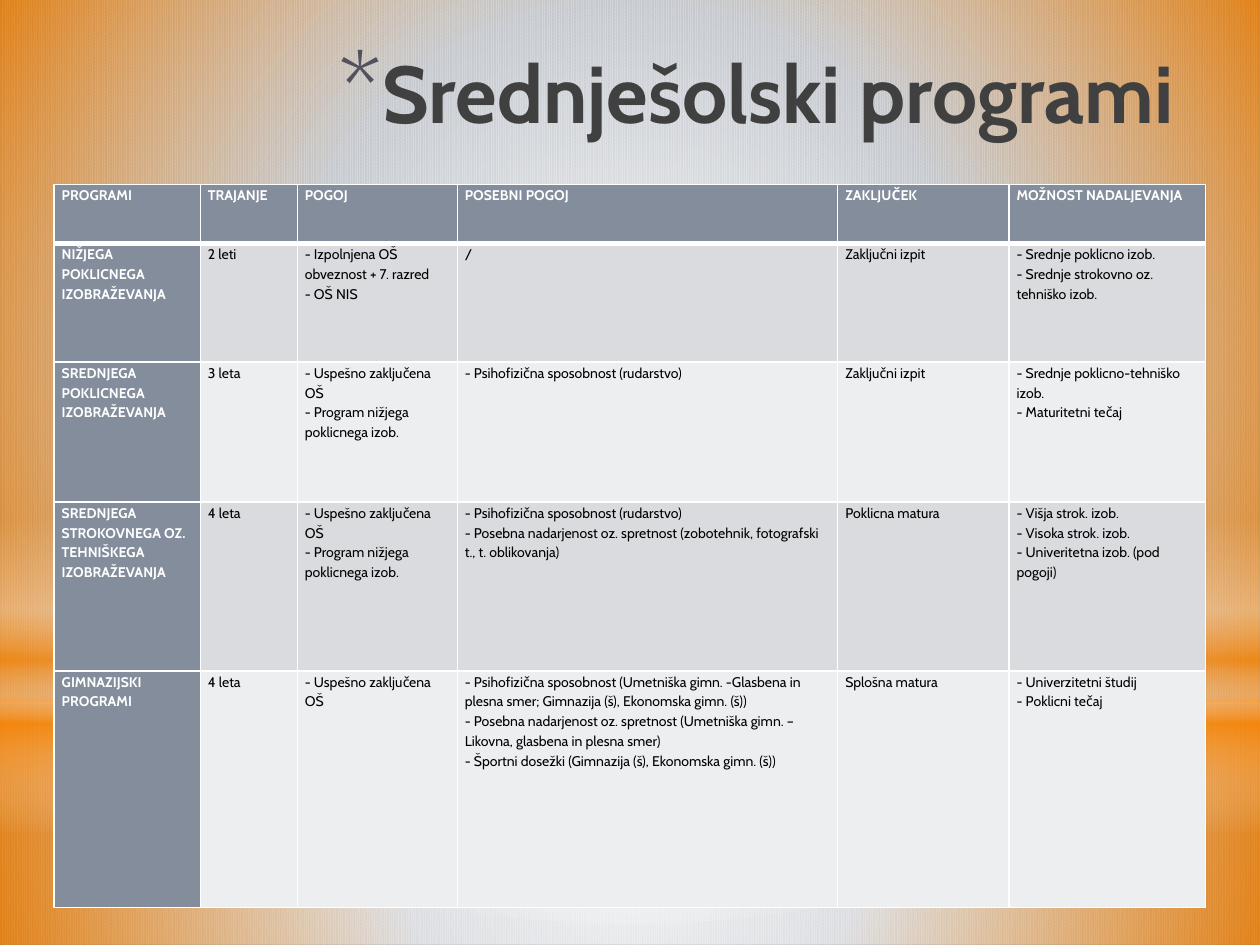
from lxml.etree import SubElement
from pptx import Presentation
from pptx.dml.color import RGBColor
from pptx.enum.dml import MSO_PATTERN_TYPE as Pattern
from pptx.enum.shapes import MSO_SHAPE as Shape
from pptx.enum.text import MSO_ANCHOR as Anchor, PP_ALIGN as Align
from pptx.oxml.ns import qn
from pptx.util import Inches, Pt


def color(value):
    return RGBColor.from_string(value)


def add_node(parent, tag, **attributes):
    return SubElement(parent, qn(f"a:{tag}"), {k: str(v) for k, v in attributes.items()})


class ProgramSlide:
    font = "Cabin"
    white, black, slate = "FFFFFF", "000000", "838D9B"
    bands = ("D9DBDE", "EDEEEF")
    unit = Inches(0.1)

    def __init__(self, presentation):
        presentation.slide_width = self.span(100)
        presentation.slide_height = self.span(75)
        self.slide = presentation.slides.add_slide(presentation.slide_layouts[6])

    def span(self, units):
        return round(units * self.unit)

    def box(self, *units):
        return [self.span(value) for value in units]

    def background(self, fore, back):
        fill = self.slide.background.fill
        fill.patterned()
        fill.pattern = Pattern.PERCENT_90
        fill.fore_color.rgb = color(fore)
        fill.back_color.rgb = color(back)

    def glow(self, kind, place, stops, angle=None):
        glow = self.slide.shapes.add_shape(kind, *self.box(*place))
        glow.shadow.inherit = False
        glow.line.fill.background()
        glow.fill.gradient()
        gradient = glow.element.spPr.find(qn("a:gradFill"))
        for child in list(gradient):
            gradient.remove(child)
        stop_list = add_node(gradient, "gsLst")
        for position, tint, opacity in stops:
            stop = add_node(stop_list, "gs", pos=position * 1000)
            add_node(add_node(stop, "srgbClr", val=tint), "alpha", val=opacity * 1000)
        if angle is None:
            center = add_node(gradient, "path", path="circle")
            add_node(center, "fillToRect", l=50000, t=50000, r=50000, b=50000)
        else:
            add_node(gradient, "lin", ang=angle * 60000, scaled=0)

    def add_words(self, paragraph, words, size, tint, bold):
        run = paragraph.add_run()
        run.text = words
        run.font.name = self.font
        run.font.size = Pt(size)
        run.font.bold = bold
        run.font.color.rgb = color(tint)

    def title(self, place, words):
        frame = self.slide.shapes.add_textbox(*self.box(*place)).text_frame
        frame.word_wrap = True
        frame.vertical_anchor = Anchor.TOP
        paragraph = frame.paragraphs[0]
        paragraph.alignment = Align.RIGHT
        properties = paragraph._p.get_or_add_pPr()
        properties.set("marL", str(self.span(3.5)))
        properties.set("indent", str(-self.span(3.5)))
        add_node(add_node(properties, "buClr"), "srgbClr", val="53515E")
        add_node(properties, "buSzPct", val=128000)
        add_node(properties, "buFont", typeface=self.font)
        add_node(properties, "buChar", char="*")
        self.add_words(paragraph, words, 46, "404040", True)

    def cell(self, cell, lines, fill, tint, bold, top, bottom):
        cell.margin_left = cell.margin_right = self.span(0.6)
        cell.margin_top = cell.margin_bottom = 0
        properties = cell._tc.get_or_add_tcPr()
        for side, width in (("lnL", 1), ("lnR", 1), ("lnT", top), ("lnB", bottom)):
            border = add_node(properties, side, w=Pt(width))
            add_node(add_node(border, "solidFill"), "srgbClr", val=self.white)
        cell.fill.solid()
        cell.fill.fore_color.rgb = color(fill)
        frame = cell.text_frame
        for index, words in enumerate(lines):
            paragraph = frame.add_paragraph() if index else frame.paragraphs[0]
            paragraph.line_spacing = 1.15
            self.add_words(paragraph, words, 8, tint, bold)

    def table(self, left, top, widths, heights, rows):
        place = self.box(left, top, sum(widths), sum(heights))
        table = self.slide.shapes.add_table(len(rows), len(widths), *place).table
        for column, width in zip(table.columns, widths):
            column.width = self.span(width)
        for row, height in zip(table.rows, heights):
            row.height = self.span(height)
        for r, row in enumerate(rows):
            for c, words in enumerate(row):
                heading = r == 0 or c == 0
                self.cell(
                    table.cell(r, c),
                    words.split("\n"),
                    self.slate if heading else self.bands[(r - 1) % 2],
                    self.white if heading else self.black,
                    heading,
                    3 if r == 1 else 1,
                    3 if r == 0 else 1,
                )


PROGRAMS = [
    ("PROGRAMI", "TRAJANJE", "POGOJ", "POSEBNI POGOJ", "ZAKLJUČEK", "MOŽNOST NADALJEVANJA"),
    ("NIŽJEGA POKLICNEGA IZOBRAŽEVANJA", "2 leti",
     "- Izpolnjena OŠ obveznost + 7. razred\n- OŠ NIS",
     "/", "Zaključni izpit",
     "- Srednje poklicno izob.\n- Srednje strokovno oz. tehniško izob."),
    ("SREDNJEGA POKLICNEGA IZOBRAŽEVANJA", "3 leta",
     "- Uspešno zaključena OŠ\n- Program nižjega poklicnega izob.",
     "- Psihofizična sposobnost (rudarstvo)", "Zaključni izpit",
     "- Srednje poklicno-tehniško izob.\n- Maturitetni tečaj"),
    ("SREDNJEGA STROKOVNEGA OZ. TEHNIŠKEGA IZOBRAŽEVANJA", "4 leta",
     "- Uspešno zaključena OŠ\n- Program nižjega poklicnega izob.",
     "- Psihofizična sposobnost (rudarstvo)\n"
     "- Posebna nadarjenost oz. spretnost (zobotehnik, fotografski t., t. oblikovanja)",
     "Poklicna matura",
     "- Višja strok. izob.\n- Visoka strok. izob.\n- Univeritetna izob. (pod pogoji)"),
    ("GIMNAZIJSKI PROGRAMI", "4 leta", "- Uspešno zaključena OŠ",
     "- Psihofizična sposobnost (Umetniška gimn. -Glasbena in plesna smer; "
     "Gimnazija (š), Ekonomska gimn. (š))\n"
     "- Posebna nadarjenost oz. spretnost (Umetniška gimn. – Likovna, glasbena in plesna smer)\n"
     "- Športni dosežki (Gimnazija (š), Ekonomska gimn. (š))",
     "Splošna matura", "- Univerzitetni študij\n- Poklicni tečaj"),
]


def main():
    white, orange = "FFFFFF", "FF8600"
    presentation = Presentation()
    page = ProgramSlide(presentation)
    page.background(page.slate, "606977")
    page.glow(Shape.RECTANGLE, (0, 55.8, 100, 19.2),
              [(0, white, 91), (37, white, 76), (100, orange, 79)])
    page.glow(Shape.RECTANGLE, (0, 0, 100, 55.8),
              [(0, white, 89), (48, white, 62), (100, orange, 79)])
    page.glow(Shape.RECTANGLE, (0, 41.2, 100, 25),
              [(0, white, 0), (29, white, 30), (45, orange, 40),
               (55, white, 26), (65, orange, 60), (100, white, 0)], angle=90)
    page.glow(Shape.OVAL, (0, 17.5, 100, 55.8), [(0, white, 100), (56, white, 0)])
    page.title((12.2, 2.9, 81.9, 9.4), "Srednješolski programi")
    page.table(4.3, 14.65, (11.6, 7.7, 12.7, 30.2, 13.6, 15.6),
               (4.7, 9.4, 11.1, 13.4, 18.8), PROGRAMS)
    presentation.save("out.pptx")


if __name__ == "__main__":
    main()
